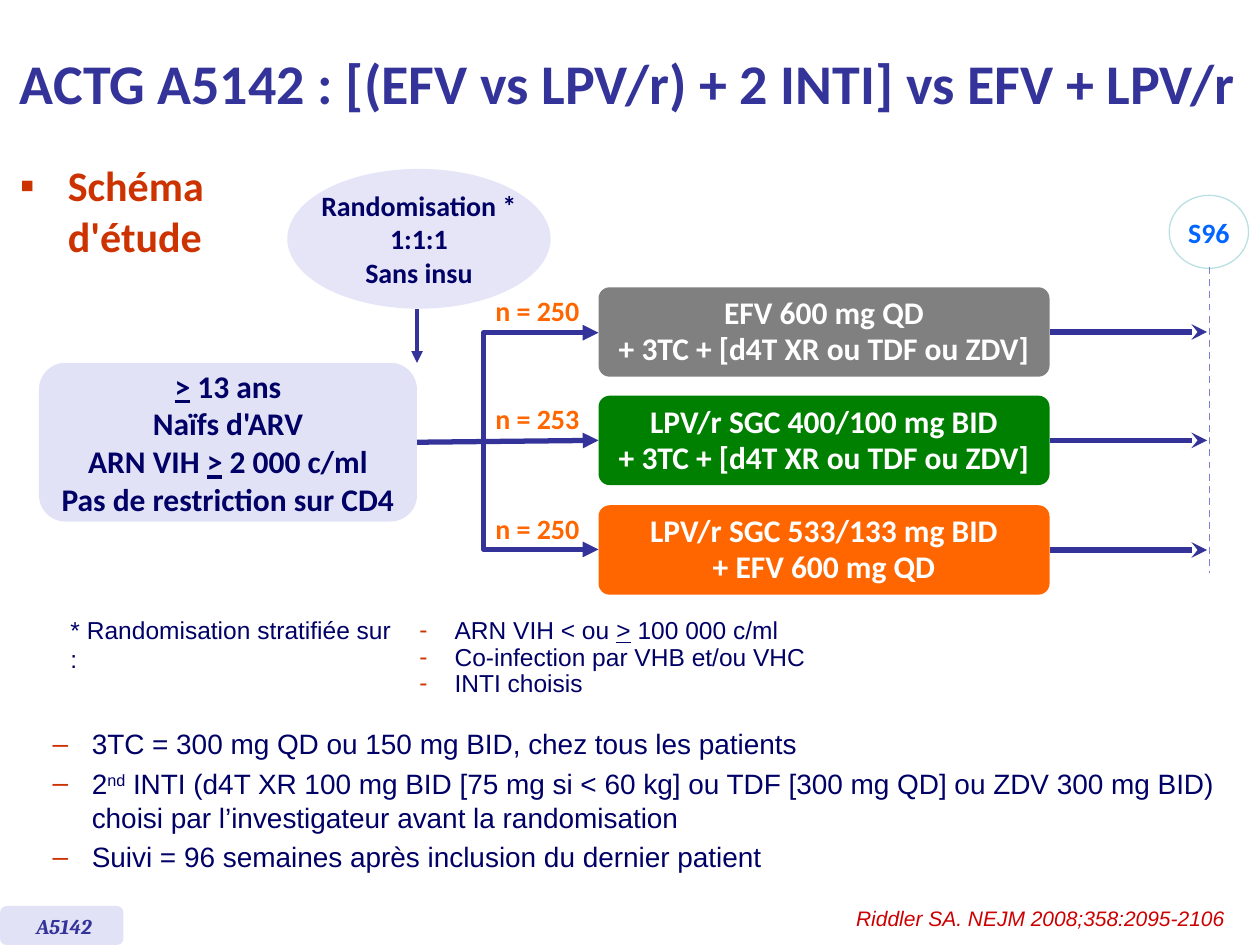
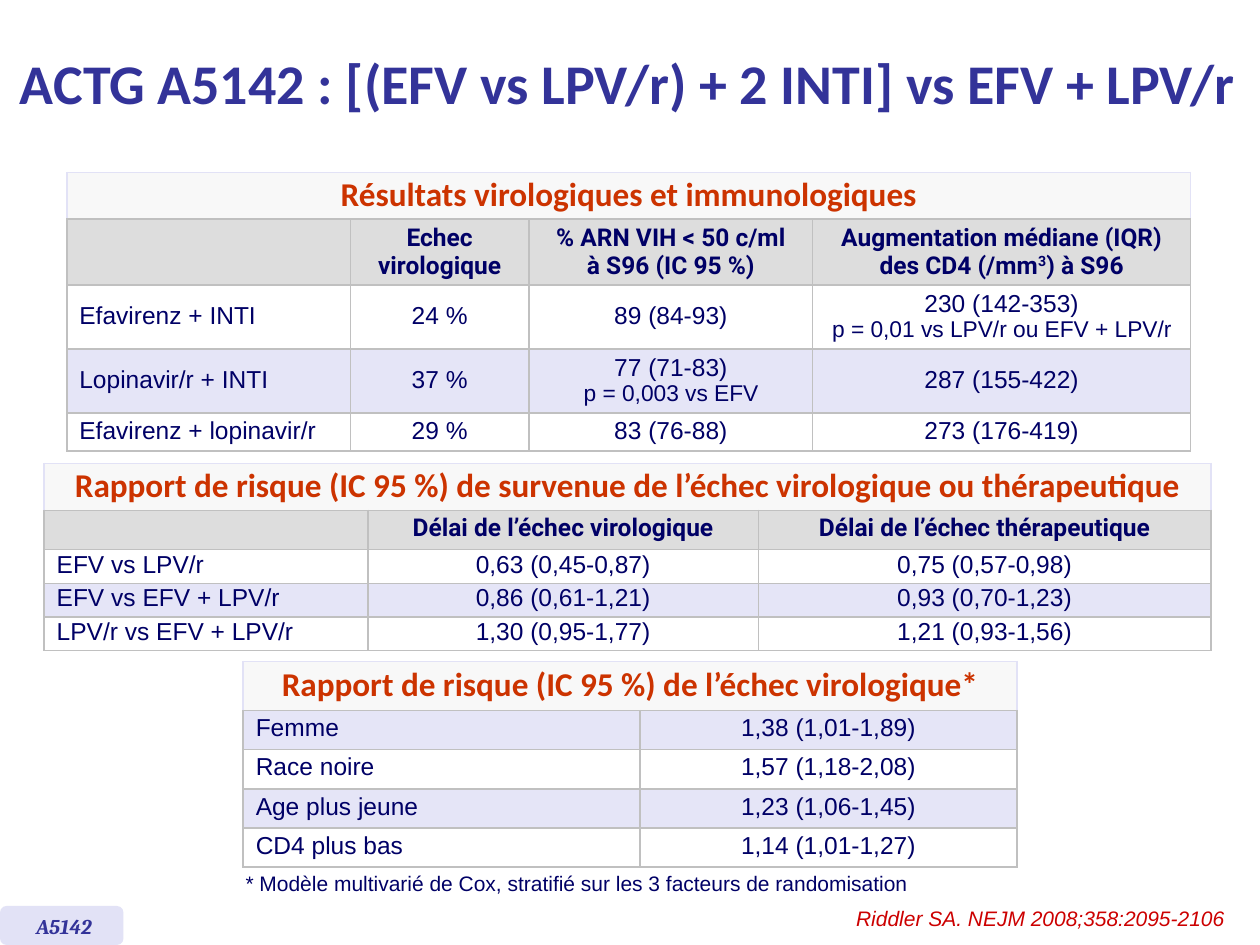
from lxml import etree
from pptx import Presentation
from pptx.dml.color import RGBColor
from pptx.enum.dml import MSO_LINE
from pptx.enum.shapes import MSO_CONNECTOR, MSO_SHAPE
from pptx.enum.text import MSO_ANCHOR, PP_ALIGN
from pptx.oxml.ns import qn
from pptx.util import Inches, Pt

LEFT, CENTER, RIGHT = PP_ALIGN.LEFT, PP_ALIGN.CENTER, PP_ALIGN.RIGHT
TOP, MIDDLE = MSO_ANCHOR.TOP, MSO_ANCHOR.MIDDLE
STRAIGHT, DASH = MSO_CONNECTOR.STRAIGHT, MSO_LINE.DASH
ROUNDED, OVAL = MSO_SHAPE.ROUNDED_RECTANGLE, MSO_SHAPE.OVAL
SIDE_LEFT, SIDE_RIGHT = 1, 3

COLORS = {
    "indigo": "333399", "navy": "000066", "rust": "CC3300", "red": "CC0000",
    "orange": "FF6600", "green": "008000", "gray": "808080", "blue": "0066FF",
    "white": "FFFFFF", "lavender": "E2E2F6", "band": "E5E5F7", "violet": "7E7ED4",
    "ice": "BBE0E3", "silver": "C0C0C0", "header": "DDDDDD", "caption": "F8F8F8",
}

# font, size, colour, bold, italic
STYLES = {
    "title": ("Calibri", 32, "indigo", True, False),
    "heading": ("Calibri", 24, "rust", True, False),
    "arm": ("Calibri", 18, "white", True, False),
    "population": ("Calibri", 18, "navy", True, False),
    "randomisation": ("Calibri", 16, "navy", True, False),
    "week": ("Calibri", 16, "blue", True, False),
    "count": ("Calibri", 16, "orange", True, False),
    "body": ("Arial", 16, "navy", False, False),
    "small": ("Arial", 14, "navy", False, False),
    "note": ("Arial", 12, "navy", False, False),
    "p value": ("Arial", 13, "navy", False, False),
    "caption": ("Calibri", 19, "rust", True, False),
    "header": ("Roboto", 14, "navy", True, False),
    "tag": ("Cambria", 12, "indigo", True, True),
    "citation": ("Arial", 12, "red", False, True),
}


def rgb(name):
    return RGBColor.from_string(COLORS[name])


def inches(values):
    return [Inches(value) for value in values]


class StudyDeck:
    """Holds the deck, its current slide and the shared look."""

    def __init__(self):
        self.deck = Presentation()
        self.deck.slide_width, self.deck.slide_height = Inches(10), Inches(7.5)

    def new_slide(self):
        """Starts a slide with the title, study tag and citation."""
        self.page = self.deck.slides.add_slide(self.deck.slide_layouts[6])
        self.text((0.06, 0.05, 9.94, 1.21),
                  ["ACTG A5142 : [(EFV vs LPV/r) + 2 INTI] vs EFV + LPV/r"],
                  "title", anchor=MIDDLE)
        self.shape(ROUNDED, (0, 7.19, 0.98, 0.31), "lavender")
        self.text((0.19, 7.2, 0.69, 0.3), ["A5142"], "tag", wrap=False)
        self.text((6.47, 7.14, 3.35, 0.3),
                  ["Riddler SA. NEJM 2008;358:2095-2106"], "citation", align=RIGHT)

    def style(self, para, name):
        font = para.font
        font.name, size, color, font.bold, font.italic = STYLES[name]
        font.size = Pt(size)
        font.color.rgb = rgb(color)

    def bullet(self, para, mark, margin, hang):
        properties = para._p.get_or_add_pPr()
        properties.set("marL", str(Inches(margin)))
        properties.set("indent", str(-Inches(hang)))
        color = etree.SubElement(properties, qn("a:buClr"))
        etree.SubElement(color, qn("a:srgbClr")).set("val", COLORS["rust"])
        etree.SubElement(properties, qn("a:buFont")).set("typeface", "Arial")
        etree.SubElement(properties, qn("a:buChar")).set("char", mark)

    def spans(self, para, parts):
        """Adds plain strings and (kind, text) pairs as runs."""
        for part in parts:
            kind, words = part if isinstance(part, tuple) else ("plain", part)
            span = para.add_run()
            span.text = words
            if kind == "underline":
                span.font.underline = True
            elif kind == "super":
                span._r.get_or_add_rPr().set("baseline", "30000")

    def put_lines(self, frame, lines, style, align=LEFT, spacing=None, bullet=None, before=0):
        for index, line in enumerate(lines):
            para = frame.add_paragraph() if index else frame.paragraphs[0]
            para.alignment = align
            if spacing:
                para.line_spacing = spacing
            if index and before:
                para.space_before = Pt(before)
            if bullet:
                self.bullet(para, *bullet)
            self.style(para, style)
            if isinstance(line, str):
                para.text = line
            else:
                self.spans(para, line)

    def text(self, at, lines, style, wrap=True, anchor=TOP, inset=True, **layout):
        box = self.page.shapes.add_textbox(*inches(at))
        frame = box.text_frame
        frame.word_wrap, frame.vertical_anchor = wrap, anchor
        if not inset:
            frame.margin_left = frame.margin_top = frame.margin_right = frame.margin_bottom = 0
        self.put_lines(frame, lines, style, **layout)

    def shape(self, kind, at, fill, lines=(), style=None, outline=None, corner=None, spacing=None):
        shape = self.page.shapes.add_shape(kind, *inches(at))
        shape.shadow.inherit = False
        shape.fill.solid()
        shape.fill.fore_color.rgb = rgb(fill)
        if outline:
            shape.line.color.rgb = rgb(outline)
            shape.line.width = Pt(0.75)
        else:
            shape.line.fill.background()
        if corner:
            shape.adjustments[0] = corner
        shape.text_frame.word_wrap = False
        shape.text_frame.vertical_anchor = MIDDLE
        self.put_lines(shape.text_frame, lines, style, CENTER, spacing)
        return shape

    def stroke(self, item, color, width, head=None, tail=None):
        item.line.color.rgb = rgb(color)
        item.line.width = Pt(width)
        outline = item._element.spPr.find(qn("a:ln"))
        for end, arrow in (("a:headEnd", head), ("a:tailEnd", tail)):
            if arrow:
                etree.SubElement(outline, qn(end)).set("type", arrow)

    def connector(self, start, end, width=3, color="indigo", tail=None, begin=None, finish=None):
        line = self.page.shapes.add_connector(STRAIGHT, *inches(start + end))
        if begin:
            line.begin_connect(begin, SIDE_RIGHT)
        if finish:
            line.end_connect(finish, SIDE_LEFT)
        self.stroke(line, color, width, tail=tail)
        etree.SubElement(line._element.spPr, qn("a:effectLst"))
        return line

    def bracket(self, points):
        """Draws an open angular line with an arrowhead at both ends."""
        start, *others = [inches(point) for point in points]
        builder = self.page.shapes.build_freeform(*start)
        builder.add_line_segments(others, close=False)
        line = builder.convert_to_shape()
        line.shadow.inherit = False
        line.fill.background()
        self.stroke(line, "indigo", 3, "triangle", "triangle")

    def cell_look(self, cell, fill, edge, margin):
        properties = cell._tc.get_or_add_tcPr()
        for side in ("L", "R", "T", "B"):
            border = etree.SubElement(properties, qn("a:ln" + side), w=str(Pt(1)))
            paint = etree.SubElement(border, qn("a:solidFill"))
            color = COLORS["silver" if side == "B" else edge]
            etree.SubElement(paint, qn("a:srgbClr")).set("val", color)
        cell.fill.solid()
        cell.fill.fore_color.rgb = rgb(fill)
        cell.margin_top = cell.margin_bottom = Inches(margin)

    def table(self, corner, widths, heights, caption, rows, spacing,
              header=None, band=1, margin=0.04, anchor=MIDDLE):
        """Draws a captioned table; a tuple cell holds a value and its p value."""
        size = (sum(widths), sum(heights))
        grid = self.page.shapes.add_table(len(heights), len(widths), *inches(corner + size)).table
        grid.first_row = grid.horz_banding = False
        for column, width in zip(grid.columns, widths):
            column.width = Inches(width)
        for row, height in zip(grid.rows, heights):
            row.height = Inches(height)
        blanks = [""] * (len(widths) - 1)
        content = [([caption] + blanks, "caption", "caption")]
        if header:
            content.append((header, "header", "header"))
        for index, row in enumerate(rows):
            content.append((row, "small", "band" if index % 2 == band else "white"))
        for y, (row, style, fill) in enumerate(content):
            for x, value in enumerate(row):
                cell = grid.cell(y, x)
                self.cell_look(cell, fill, "silver" if y else "lavender", margin)
                cell.vertical_anchor = anchor
                value, *notes = value if isinstance(value, tuple) else (value,)
                align = LEFT if style == "small" and x == 0 else CENTER
                line_spacing = spacing if y else 0.9
                self.put_lines(cell.text_frame, [value], style, align, line_spacing)
                for note in notes:
                    para = cell.text_frame.add_paragraph()
                    para.alignment, para.line_spacing = align, line_spacing
                    self.style(para, "p value")
                    para.text = note
        grid.cell(0, 0).merge(grid.cell(0, len(widths) - 1))


def design_slide(study):
    study.new_slide()
    study.text((0.06, 1.22, 1.98, 0.63), ["Schéma d'étude"], "heading", bullet=("▪", 0.38, 0.38))
    study.shape(OVAL, (2.28, 1.34, 2.09, 1.11), "band",
                ["Randomisation *", "1:1:1", "Sans insu"], "randomisation")
    at_least = ("underline", ">")
    population = study.shape(
        ROUNDED, (0.31, 2.88, 3, 1.26), "lavender",
        [[at_least, " 13 ans"], "Naïfs d'ARV", ["ARN VIH ", at_least, " 2 000 c/ml"],
         "Pas de restriction sur CD4"], "population")
    study.connector((3.31, 2.45), (3.31, 2.88), 2.25, tail="triangle")

    study.shape(OVAL, (9.28, 1.55, 0.63, 0.58), "white", ["S96"], "week", outline="ice")
    week_line = study.connector((9.6, 2.12), (9.6, 4.55), 1, "violet")
    week_line.line.dash_style = DASH

    backbone = "+ 3TC + [d4T XR ou TDF ou ZDV]"
    arms = [
        (2.28, "gray", "n = 250", ["EFV 600 mg QD\n" + backbone]),
        (3.14, "green", "n = 253", ["LPV/r SGC 400/100 mg BID", backbone]),
        (4.01, "orange", "n = 250", ["LPV/r SGC 533/133 mg BID", "+ EFV 600 mg QD"]),
    ]
    study.bracket([(4.75, 2.64), (3.84, 2.64), (3.84, 4.36), (4.75, 4.36)])
    for index, (top, color, count, regimen) in enumerate(arms):
        arm = study.shape(ROUNDED, (4.75, top, 3.58, 0.71), color, regimen, "arm",
                          corner=0.125, spacing=0.95)
        middle = top + 0.71 / 2
        study.connector((8.33, middle), (9.58, middle), tail="stealth", begin=arm)
        if index == 1:
            study.connector((3.31, 3.51), (4.75, middle), tail="triangle",
                            begin=population, finish=arm)
        study.text((3.83, top, 0.87, 0.37), [count], "count", wrap=False, align=CENTER)

    study.text((0.56, 4.88, 2.6, 0.48), ["* Randomisation stratifiée sur :"], "small", inset=False)
    study.text((3.23, 4.86, 5, 0.73),
               [["ARN VIH < ou ", at_least, " 100 000 c/ml"],
                "Co-infection par VHB et/ou VHC", "INTI choisis"],
               "small", spacing=0.9, bullet=("-", 0.28, 0.28))
    study.text((-0.18, 5.72, 10.18, 1.34),
               ["3TC = 300 mg QD ou 150 mg BID, chez tous les patients",
                ["2", ("super", "nd"),
                 " INTI (d4T XR 100 mg BID [75 mg si < 60 kg] ou TDF [300 mg QD] ou ZDV 300 mg BID)"
                 " choisi par l’investigateur avant la randomisation"],
                "Suivi = 96 semaines après inclusion du dernier patient"],
               "body", bullet=("–", 0.81, 0.31), before=3.5)


def results_slide(study):
    study.new_slide()
    study.table(
        (0.53, 1.37), (2.25, 1.42, 2.25, 3), (0.37, 0.52, 0.48, 0.48, 0.28),
        "Résultats virologiques et immunologiques",
        [["Efavirenz + INTI", "24 %", "89 (84-93)",
          ("230 (142-353)", "p = 0,01 vs LPV/r ou EFV + LPV/r")],
         ["Lopinavir/r + INTI", "37 %", ("77 (71-83)", "p = 0,003 vs EFV"), "287 (155-422)"],
         ["Efavirenz + lopinavir/r", "29 %", "83 (76-88)", "273 (176-419)"]],
        0.95,
        header=["", "Echec virologique", "% ARN VIH < 50 c/ml\nà S96 (IC 95 %)",
                ["Augmentation médiane (IQR) des CD4 (/mm", ("super", "3"), ") à S96"]])
    study.table(
        (0.35, 3.68), (2.57, 3.1, 3.59), (0.37, 0.3, 0.26, 0.25, 0.26),
        "Rapport de risque (IC 95 %) de survenue de l’échec virologique ou thérapeutique",
        [["EFV vs LPV/r", "0,63 (0,45-0,87)", "0,75 (0,57-0,98)"],
         ["EFV vs EFV + LPV/r", "0,86 (0,61-1,21)", "0,93 (0,70-1,23)"],
         ["LPV/r vs EFV + LPV/r", "1,30 (0,95-1,77)", "1,21 (0,93-1,56)"]],
        0.8, header=["", "Délai de l’échec virologique", "Délai de l’échec thérapeutique"])
    study.table(
        (1.93, 5.25), (3.15, 2.99), (0.39, 0.3, 0.3, 0.3, 0.3),
        "Rapport de risque (IC 95 %) de l’échec virologique*",
        [["Femme", "1,38 (1,01-1,89)"], ["Race noire", "1,57 (1,18-2,08)"],
         ["Age plus jeune", "1,23 (1,06-1,45)"], ["CD4 plus bas", "1,14 (1,01-1,27)"]],
        0.9, band=0, margin=0.05, anchor=TOP)
    study.text((1.85, 6.86, 6.22, 0.3),
               ["* Modèle multivarié de Cox, stratifié sur les 3 facteurs de randomisation"], "note")


def main():
    study = StudyDeck()
    design_slide(study)
    results_slide(study)
    study.deck.save("out.pptx")


if __name__ == "__main__":
    main()
